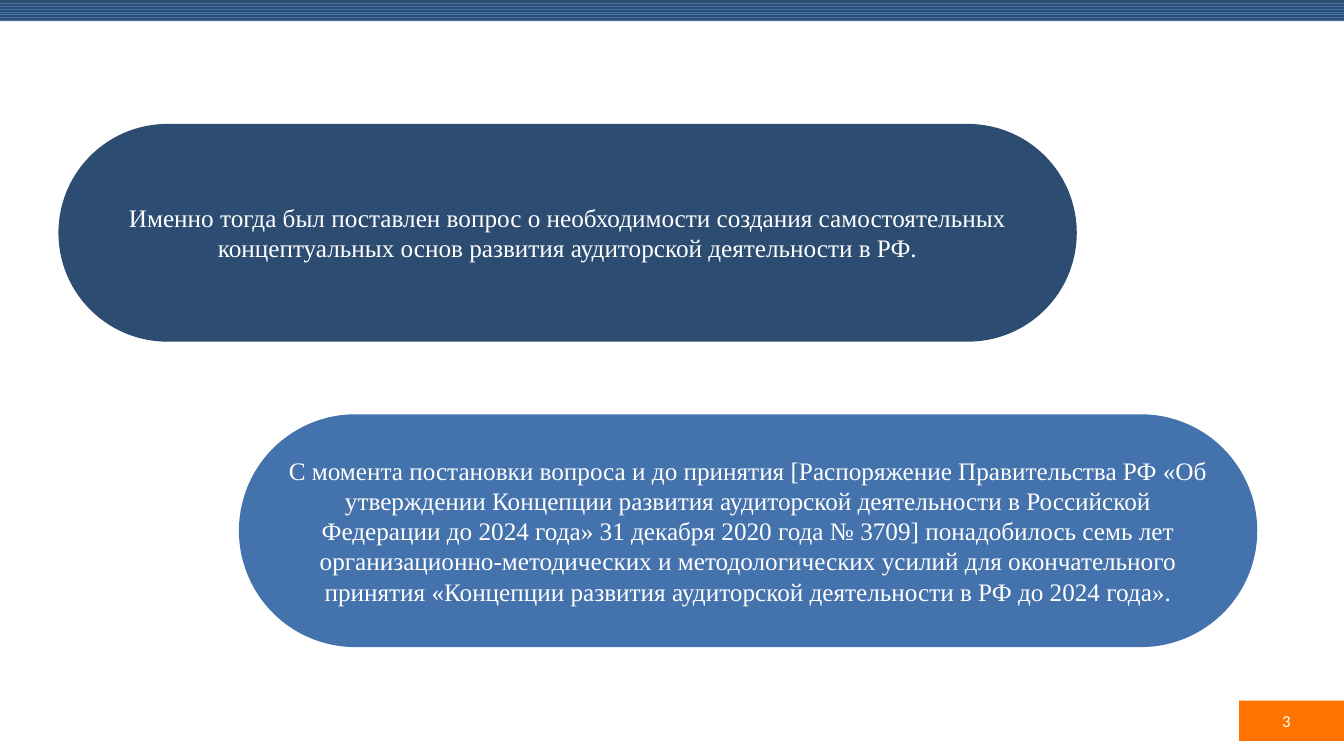
from pptx import Presentation
from pptx.dml.color import RGBColor
from pptx.enum.dml import MSO_PATTERN
from pptx.enum.shapes import MSO_SHAPE
from pptx.enum.text import MSO_ANCHOR, PP_ALIGN
from pptx.util import Inches, Pt

NAVY = RGBColor(0x2D, 0x4C, 0x72)
BLUE = RGBColor(0x44, 0x72, 0xAC)
ORANGE = RGBColor(0xFF, 0x74, 0x00)
WHITE = RGBColor(0xFF, 0xFF, 0xFF)

SLIDE_WIDTH = 13.33
PILL_WIDTH = 10.1

QUESTION = (
    "Именно тогда был поставлен вопрос о необходимости создания самостоятельных "
    "концептуальных основ развития аудиторской деятельности в РФ."
)
ADOPTION = (
    "С момента постановки вопроса и до принятия [Распоряжение Правительства РФ "
    "«Об утверждении Концепции развития аудиторской деятельности в Российской "
    "Федерации до 2024 года» 31 декабря 2020 года № 3709] понадобилось семь лет "
    "организационно-методических и методологических усилий для окончательного "
    "принятия «Концепции развития аудиторской деятельности в РФ до 2024 года»."
)


def add_block(slide, preset, left, top, width, height, color):
    block = slide.shapes.add_shape(
        preset, Inches(left), Inches(top), Inches(width), Inches(height)
    )
    block.shadow.inherit = False
    block.fill.solid()
    block.fill.fore_color.rgb = color
    block.line.fill.background()
    return block


def write(holder, text, font_name, size, alignment):
    frame = holder.text_frame
    frame.word_wrap = True
    frame.vertical_anchor = MSO_ANCHOR.MIDDLE
    frame.text = text
    paragraph = frame.paragraphs[0]
    paragraph.alignment = alignment
    font = paragraph.runs[0].font
    font.name = font_name
    font.size = Pt(size)
    font.color.rgb = WHITE


def add_top_band(slide):
    band = add_block(slide, MSO_SHAPE.RECTANGLE, 0, 0, SLIDE_WIDTH, 0.21, NAVY)
    band.fill.patterned()
    band.fill.pattern = MSO_PATTERN.ZIG_ZAG
    band.fill.fore_color.rgb = BLUE
    band.fill.back_color.rgb = NAVY


def add_page_number(slide, number):
    top, height = 6.95, 0.4
    add_block(slide, MSO_SHAPE.RECTANGLE, 12.29, top, 1.04, height, ORANGE)
    label = slide.shapes.add_textbox(
        Inches(9.9), Inches(top), Inches(3), Inches(height)
    )
    write(label, str(number), "Calibri", 12, PP_ALIGN.RIGHT)


def add_pill(slide, left, top, height, color, text):
    pill = add_block(
        slide, MSO_SHAPE.ROUNDED_RECTANGLE, left, top, PILL_WIDTH, height, color
    )
    pill.adjustments[0] = 0.5
    write(pill, text, "Times New Roman", 18, PP_ALIGN.CENTER)


def main():
    deck = Presentation()
    deck.slide_width = Inches(SLIDE_WIDTH)
    deck.slide_height = Inches(7.5)
    slide = deck.slides.add_slide(deck.slide_layouts[6])
    add_top_band(slide)
    add_page_number(slide, 3)
    add_pill(slide, 2.37, 4.11, 2.31, BLUE, ADOPTION)
    add_pill(slide, 0.58, 1.23, 2.16, NAVY, QUESTION)
    deck.save("out.pptx")


if __name__ == "__main__":
    main()
